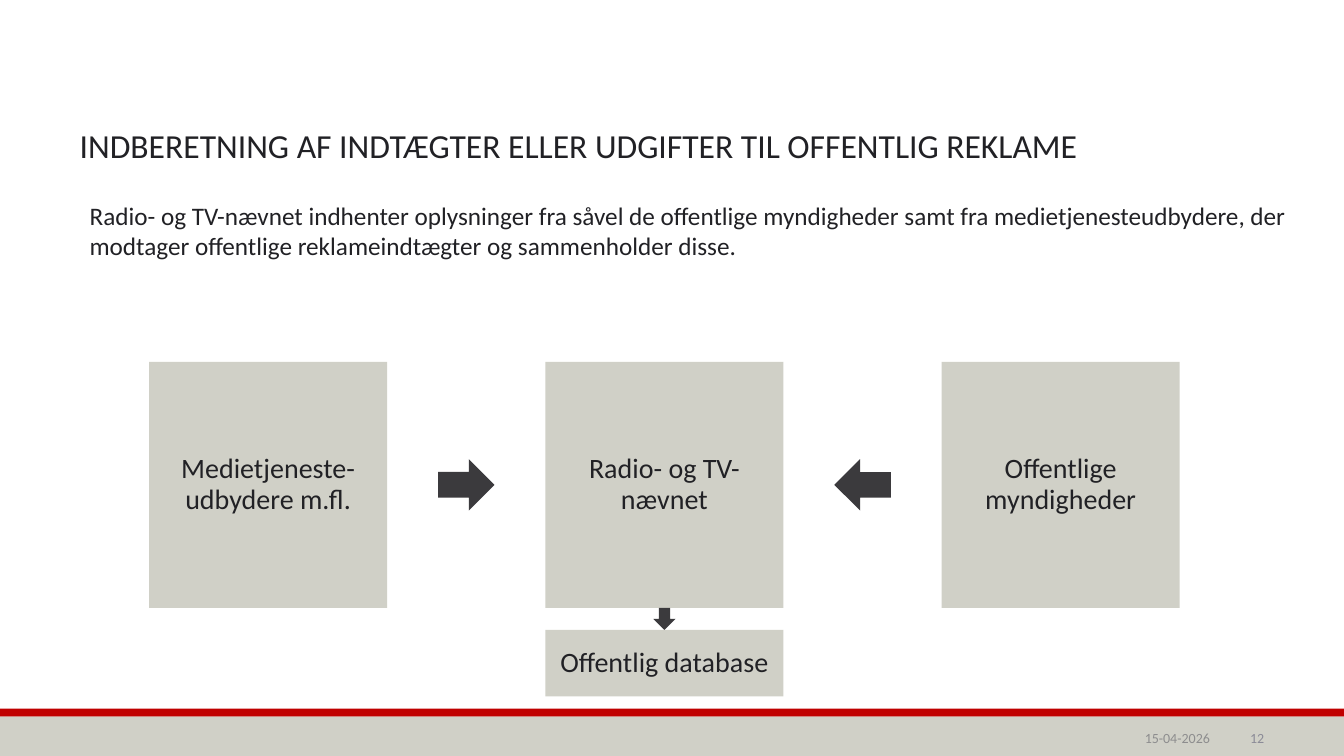
"""Build the slide on reporting income and spending on public advertising."""
from pptx import Presentation
from pptx.dml.color import RGBColor
from pptx.enum.shapes import MSO_SHAPE as SHAPE
from pptx.enum.text import MSO_ANCHOR as ANCHOR, MSO_AUTO_SIZE as AUTO, PP_ALIGN as ALIGN
from pptx.util import Inches, Pt

TITLE = "INDBERETNING AF INDTÆGTER ELLER UDGIFTER TIL OFFENTLIG REKLAME"
INTRO = ("Radio- og TV-nævnet indhenter oplysninger fra såvel de offentlige myndigheder "
         "samt fra medietjenesteudbydere, der modtager offentlige reklameindtægter og "
         "sammenholder disse.")
PARTIES = ["Medietjeneste-udbydere m.fl.", "Radio- og TV-nævnet", "Offentlige myndigheder"]
DATABASE = "Offentlig database"
FOOTER = [("15-04-2026", 10.03, 1.97, "date"), ("12", 12.11, 0.43, "number")]
COLORS = {"text": "212125", "box": "D0D0C7", "arrow": "3B3A3D", "red": "C00000",
          "date": "8D8D8E", "number": "8B8B97"}

SLIDE_W, SLIDE_H = 13.33, 7.5
BAND_Y, RED_H = 7.03, 0.08
BOX_X, BOX_Y, BOX_W, BOX_H, PITCH = 1.48, 3.59, 2.36, 2.44, 3.93
ARROW_W, ARROW_H = 0.56, 0.51
DOWN = 0.22
DATABASE_H = 0.66


def rgb(name):
    return RGBColor.from_string(COLORS[name])


def write(sp, text, size, color="text", align=ALIGN.LEFT, anchor=ANCHOR.MIDDLE,
          inset=0, spacing=None, after=0):
    tf = sp.text_frame
    tf.word_wrap = True
    tf.auto_size = AUTO.NONE
    tf.vertical_anchor = anchor
    if inset is not None:
        tf.margin_left = tf.margin_right = tf.margin_top = tf.margin_bottom = Inches(inset)
    tf.text = text
    p = tf.paragraphs[0]
    p.alignment = align
    p.space_after = Pt(after)
    if spacing:
        p.line_spacing = spacing
    p.font.name = "Calibri"
    p.font.size = Pt(size)
    p.font.color.rgb = rgb(color)


def add_block(s, kind, x, y, w, h, color, rotation=0):
    sp = s.shapes.add_shape(kind, Inches(x), Inches(y), Inches(w), Inches(h))
    sp.shadow.inherit = False
    sp.fill.solid()
    sp.fill.fore_color.rgb = rgb(color)
    sp.line.fill.background()
    sp.rotation = rotation
    return sp


def add_box(s, text, x, y, h):
    sp = add_block(s, SHAPE.RECTANGLE, x, y, BOX_W, h, "box")
    write(sp, text, 20, align=ALIGN.CENTER, inset=0.08, spacing=0.9, after=6)


def add_text(s, x, y, w, h):
    return s.shapes.add_textbox(Inches(x), Inches(y), Inches(w), Inches(h))


def main():
    prs = Presentation()
    prs.slide_width, prs.slide_height = Inches(SLIDE_W), Inches(SLIDE_H)
    s = prs.slides.add_slide(prs.slide_layouts[5])

    add_block(s, SHAPE.RECTANGLE, 0, BAND_Y, SLIDE_W, RED_H, "red")
    footer_y = BAND_Y + RED_H
    add_block(s, SHAPE.RECTANGLE, 0, footer_y, SLIDE_W, SLIDE_H - footer_y, "box")

    title = s.shapes.title
    title.left, title.top = Inches(0.79), Inches(0.98)
    title.width, title.height = Inches(11.76), Inches(0.98)
    write(title, TITLE, 24, spacing=0.83)
    write(add_text(s, 0.79, 1.94, 12.45, 0.71), INTRO, 18, anchor=ANCHOR.TOP, inset=None)

    for i, party in enumerate(PARTIES):
        add_box(s, party, BOX_X + i * PITCH, BOX_Y, BOX_H)

    gap_middle = BOX_X + (BOX_W + PITCH) / 2
    arrow_y = BOX_Y + (BOX_H - ARROW_H) / 2
    for i, rotation in enumerate((0, 180)):
        add_block(s, SHAPE.RIGHT_ARROW, gap_middle + i * PITCH - ARROW_W / 2, arrow_y,
                  ARROW_W, ARROW_H, "arrow", rotation)

    center_x = BOX_X + PITCH
    box_bottom = BOX_Y + BOX_H
    add_block(s, SHAPE.RIGHT_ARROW, center_x + (BOX_W - DOWN) / 2, box_bottom,
              DOWN, DOWN, "arrow", 90)
    add_box(s, DATABASE, center_x, box_bottom + DOWN, DATABASE_H)

    for text, x, w, color in FOOTER:
        write(add_text(s, x, 7.2, w, 0.2), text, 10, color, ALIGN.RIGHT, ANCHOR.BOTTOM)

    prs.save("out.pptx")


if __name__ == "__main__":
    main()
